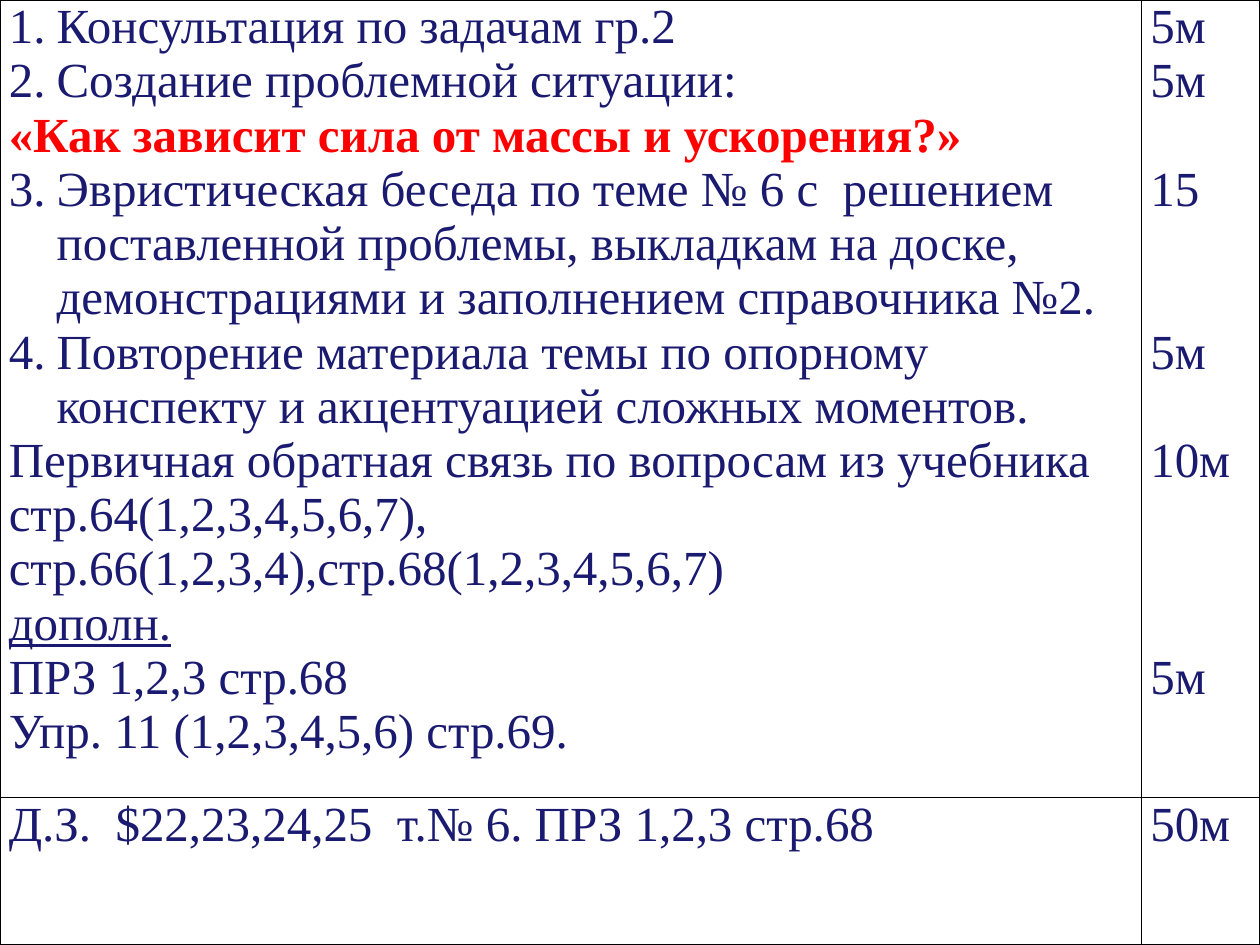
from lxml.etree import SubElement
from pptx import Presentation
from pptx.dml.color import RGBColor
from pptx.oxml.ns import qn
from pptx.util import Inches, Pt

NAVY = RGBColor(0x1A, 0x1A, 0x70)
RED = RGBColor(0xFF, 0x00, 0x00)
BLACK = RGBColor(0x00, 0x00, 0x00)
FONT, SIZE, LINE_PITCH = "Times New Roman", 28, 31

# Content: each line is (text, format)
PLAN = [
    ("Консультация по задачам гр.2", {"start": 1}),
    ("Создание проблемной ситуации:", {"start": 1}),
    ("«Как зависит сила от массы и ускорения?»", {"color": RED, "bold": True}),
    ("Эвристическая беседа по теме № 6 с  решением поставленной проблемы, "
     "выкладкам на доске, демонстрациями и заполнением справочника №2.", {"start": 3}),
    ("Повторение материала темы по опорному конспекту и акцентуацией "
     "сложных моментов.", {"start": 3}),
    ("Первичная обратная связь по вопросам из учебника стр.64(1,2,3,4,5,6,7),\n"
     "стр.66(1,2,3,4),стр.68(1,2,3,4,5,6,7)", {}),
    ("дополн.", {"underline": True}),
    ("ПРЗ 1,2,3 стр.68", {}),
    ("Упр. 11 (1,2,3,4,5,6) стр.69.", {}),
]
TIMES = [
    ("5м", {}),
    ("5м", {}),
    ("15", {"skip": 1}),
    ("5м", {"skip": 2}),
    ("10м", {"skip": 1}),
    ("5м", {"skip": 3}),
]
HOMEWORK = [("Д.З.  $22,23,24,25  т.№ 6. ПРЗ 1,2,3 стр.68", {})]
TOTAL = [("50м", {})]
ROWS = [(PLAN, TIMES), (HOMEWORK, TOTAL)]

# Shares of the slide's width and height
COLUMN_SHARES = (0.906, 0.094)
ROW_SHARES = (0.844, 0.156)


def write_line(para, text, color=NAVY, bold=False, underline=False, start=None, skip=0):
    """Fill a paragraph; start numbers it, skip leaves empty lines above it."""
    if skip:
        para.space_before = Pt(skip * LINE_PITCH)
    if start:
        properties = para._p.get_or_add_pPr()
        properties.set("marL", str(Inches(0.38)))
        properties.set("indent", str(-Inches(0.38)))
        SubElement(properties, qn("a:buFontTx"))
        SubElement(properties, qn("a:buAutoNum"), type="arabicPeriod", startAt=str(start))
    for index, part in enumerate(text.split("\n")):
        if index:
            para.add_line_break()
        span = para.add_run()
        span.text = part
        span.font.name, span.font.size = FONT, Pt(SIZE)
        span.font.bold, span.font.underline = bold, underline
        span.font.color.rgb = color


def style_cell(cell):
    cell.margin_left = cell.margin_right = Inches(0.07)
    cell.margin_top = cell.margin_bottom = 0
    properties = cell._tc.get_or_add_tcPr()
    for side in ("L", "R", "T", "B"):
        line = SubElement(properties, qn(f"a:ln{side}"), w=str(Pt(1)))
        fill = SubElement(line, qn("a:solidFill"))
        SubElement(fill, qn("a:srgbClr"), val=str(BLACK))
    cell.fill.background()


def main():
    deck = Presentation()
    deck.slide_width, deck.slide_height = Inches(10), Inches(7.5)
    page = deck.slides.add_slide(deck.slide_layouts[6])

    # Lesson plan table over the whole slide
    table = page.shapes.add_table(
        len(ROWS), len(COLUMN_SHARES), 0, 0, deck.slide_width, deck.slide_height).table
    table.first_row = table.horz_banding = False
    for column, share in zip(table.columns, COLUMN_SHARES):
        column.width = round(deck.slide_width * share)
    for row, share in zip(table.rows, ROW_SHARES):
        row.height = round(deck.slide_height * share)

    # Cell text
    for row, contents in zip(table.rows, ROWS):
        for cell, lines in zip(row.cells, contents):
            style_cell(cell)
            frame = cell.text_frame
            for index, (text, style) in enumerate(lines):
                para = frame.add_paragraph() if index else frame.paragraphs[0]
                write_line(para, text, **style)

    deck.save("out.pptx")


if __name__ == "__main__":
    main()
